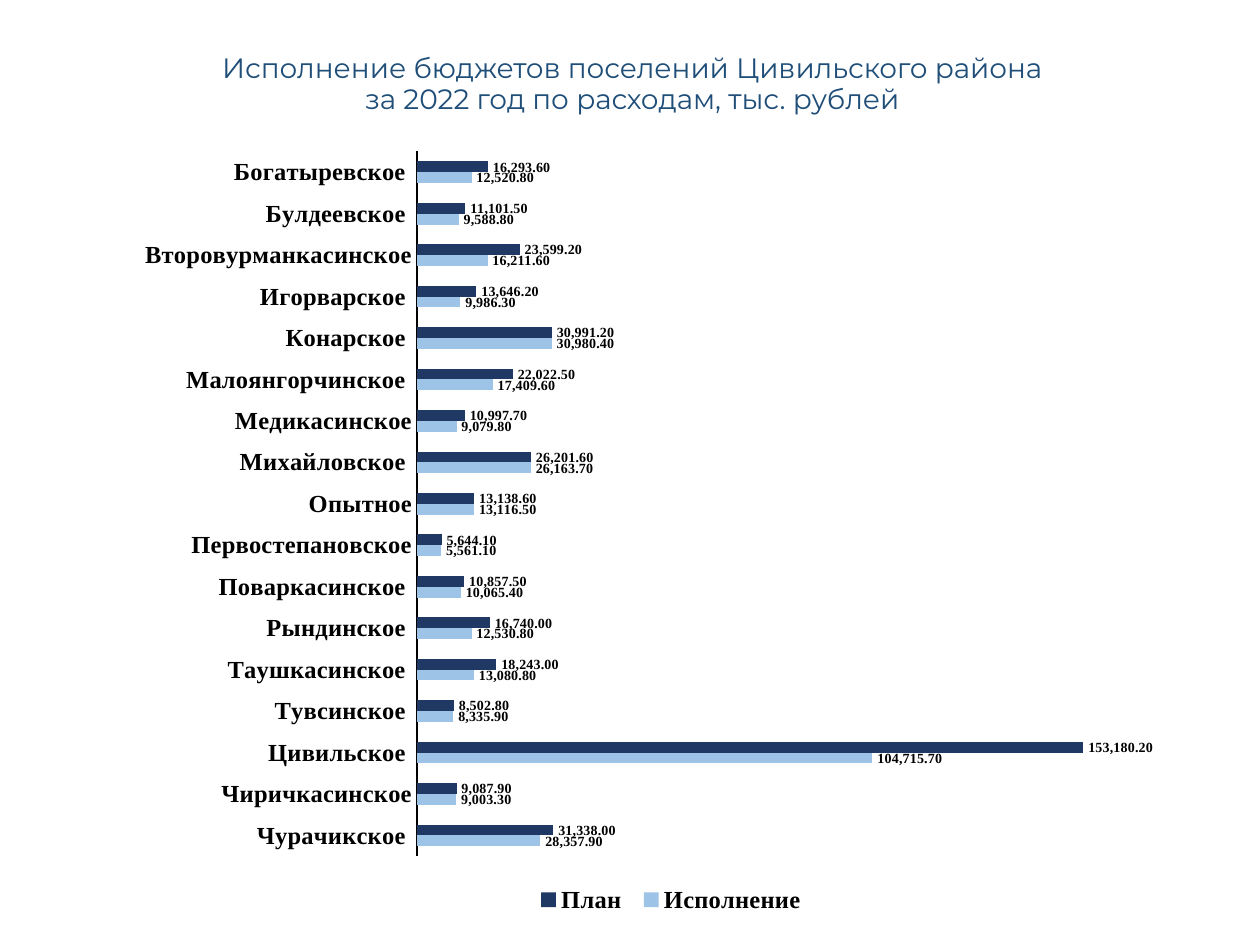
import pptx
import pptx.chart.data
import pptx.dml.color
import pptx.enum.chart
import pptx.enum.text
import pptx.oxml
import pptx.oxml.ns
import pptx.util

TITLE_LINES = [
    "Исполнение бюджетов поселений Цивильского района",
    "за 2022 год по расходам, тыс. рублей",
]
SETTLEMENTS = [
    ("Богатыревское ", 16293.6, 12520.8),
    ("Булдеевское ", 11101.5, 9588.8),
    ("Второвурманкасинское", 23599.2, 16211.6),
    ("Игорварское ", 13646.2, 9986.3),
    ("Конарское ", 30991.2, 30980.4),
    ("Малоянгорчинское ", 22022.5, 17409.6),
    ("Медикасинское", 10997.7, 9079.8),
    ("Михайловское ", 26201.6, 26163.7),
    ("Опытное", 13138.6, 13116.5),
    ("Первостепановское", 5644.1, 5561.1),
    ("Поваркасинское ", 10857.5, 10065.4),
    ("Рындинское ", 16740, 12530.8),
    ("Таушкасинское ", 18243, 13080.8),
    ("Тувсинское ", 8502.8, 8335.9),
    ("Цивильское ", 153180.2, 104715.7),
    ("Чиричкасинское", 9087.9, 9003.3),
    ("Чурачикское ", 31338, 28357.9),
]
COLORS = {"title": "1F4E79", "plan": "203864", "actual": "9DC3E6", "text": "000000"}
NUMBER_FORMAT = "#,##0.00"
PLOT_LAYOUT = {"x": 0.27, "y": 0.03, "w": 0.72, "h": 0.9}
PLOT_LAYOUT = {"x": 0.265, "y": 0.026, "w": 0.716, "h": 0.895}

Inches = pptx.util.Inches


def rgb(name):
    return pptx.dml.color.RGBColor.from_string(COLORS[name])


def style(font, size, face="Times New Roman", color="text", bold=True):
    font.size = pptx.util.Pt(size)
    font.name = face
    font.bold = bold
    font.color.rgb = rgb(color)


def add_title(slide):
    box = slide.shapes.add_textbox(Inches(0.71), Inches(0.31), Inches(8.62), Inches(0.73))
    frame = box.text_frame
    frame.word_wrap = True
    frame.vertical_anchor = pptx.enum.text.MSO_ANCHOR.MIDDLE
    heading = frame.paragraphs[0]
    heading.text = "\v".join(TITLE_LINES)
    heading.alignment = pptx.enum.text.PP_ALIGN.CENTER
    heading.line_spacing = 0.9
    style(heading.font, 16, "Montserrat", "title", False)


def place_plot(chart):
    plot_area = chart.plots[0]._element.getparent()
    for old in plot_area.findall(pptx.oxml.ns.qn("c:layout")):
        plot_area.remove(old)
    settings = '<c:layoutTarget val="inner"/><c:xMode val="edge"/><c:yMode val="edge"/>'
    settings += "".join(f'<c:{key} val="{value}"/>' for key, value in PLOT_LAYOUT.items())
    plot_area.insert(0, pptx.oxml.parse_xml(
        f'<c:layout {pptx.oxml.ns.nsdecls("c")}>'
        f"<c:manualLayout>{settings}</c:manualLayout></c:layout>"
    ))


def add_budget_chart(slide):
    names, plan, actual = zip(*reversed(SETTLEMENTS))
    budget = pptx.chart.data.CategoryChartData(number_format=NUMBER_FORMAT)
    budget.categories = names
    budget.add_series("Исполнение ", actual)
    budget.add_series("План ", plan)
    chart = slide.shapes.add_chart(
        pptx.enum.chart.XL_CHART_TYPE.BAR_CLUSTERED,
        Inches(1.01), Inches(1.04), Inches(8.68), Inches(6.25), budget,
    ).chart
    chart.has_title = False
    style(chart.font, 10, "Calibri", bold=False)
    place_plot(chart)

    bars = chart.plots[0]
    bars.gap_width = 182
    bars.overlap = 0
    bars.vary_by_categories = False
    for series, color in zip(bars.series, ("actual", "plan")):
        series.format.fill.solid()
        series.format.fill.fore_color.rgb = rgb(color)
        series.invert_if_negative = False
        labels = series.data_labels
        labels.show_value = True
        labels.number_format = NUMBER_FORMAT
        labels.number_format_is_linked = False
        labels.position = pptx.enum.chart.XL_LABEL_POSITION.OUTSIDE_END
        style(labels.font, 8)

    settlements = chart.category_axis
    settlements.major_tick_mark = pptx.enum.chart.XL_TICK_MARK.NONE
    settlements.has_major_gridlines = False
    settlements.format.line.color.rgb = rgb("text")
    settlements.format.line.width = pptx.util.Pt(0.75)
    style(settlements.tick_labels.font, 14)

    amounts = chart.value_axis
    amounts.minimum_scale = 0
    amounts.maximum_scale = 180000
    amounts.has_major_gridlines = False
    amounts.visible = False

    chart.has_legend = True
    chart.legend.position = pptx.enum.chart.XL_LEGEND_POSITION.BOTTOM
    chart.legend.include_in_layout = False
    style(chart.legend.font, 14)


def main():
    deck = pptx.Presentation()
    deck.slide_width = Inches(10)
    deck.slide_height = Inches(7.5)
    slide = deck.slides.add_slide(deck.slide_layouts[6])
    add_title(slide)
    add_budget_chart(slide)
    deck.save("out.pptx")


if __name__ == "__main__":
    main()
